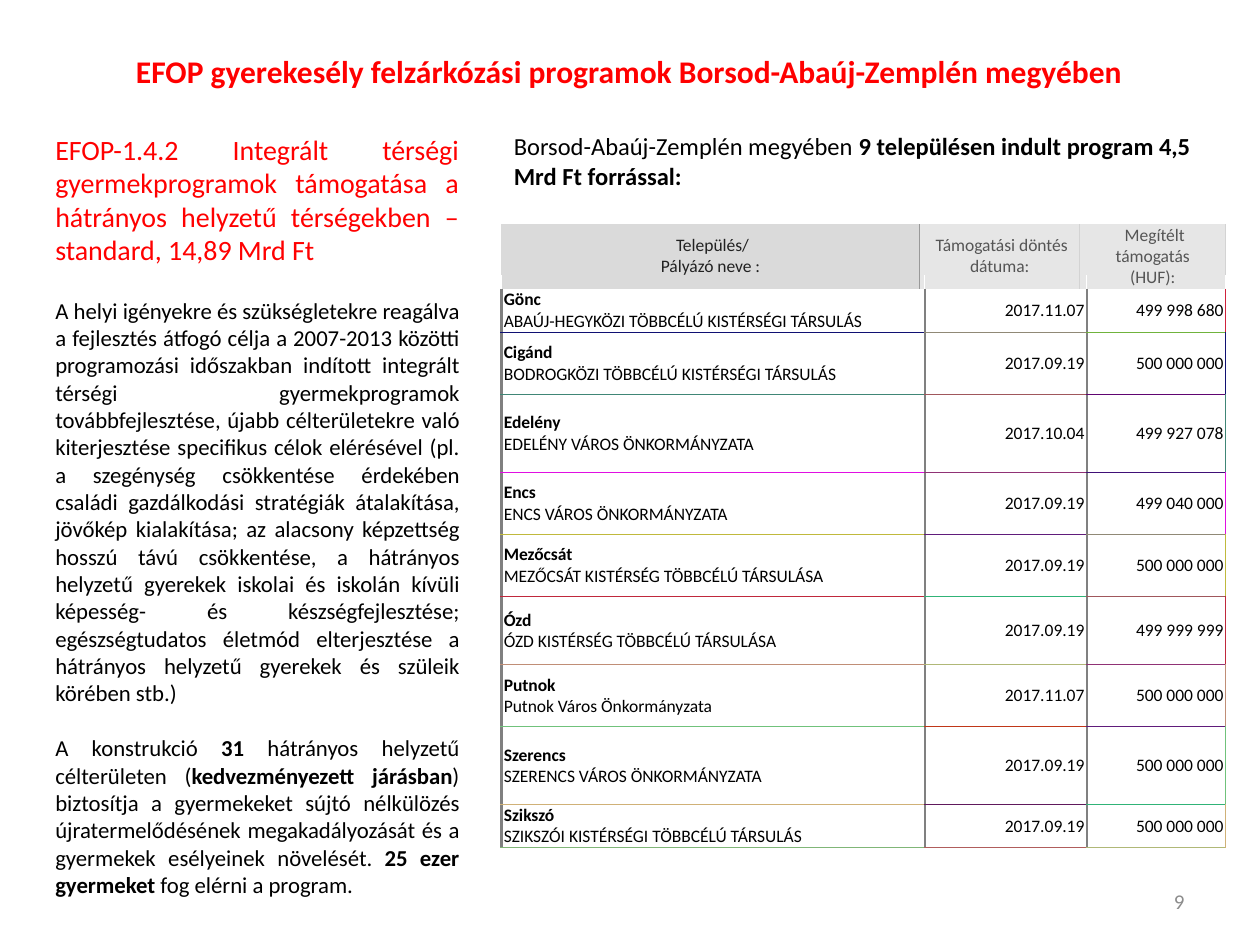
from dataclasses import dataclass

from lxml import etree
from pptx import Presentation
from pptx.dml.color import RGBColor
from pptx.enum.text import MSO_ANCHOR, PP_ALIGN
from pptx.oxml.ns import qn
from pptx.util import Pt

LEFT, CENTER, RIGHT, JUSTIFY = PP_ALIGN.LEFT, PP_ALIGN.CENTER, PP_ALIGN.RIGHT, PP_ALIGN.JUSTIFY
TOP, MIDDLE = MSO_ANCHOR.TOP, MSO_ANCHOR.MIDDLE
PLAIN_TABLE = "{2D5ABB26-0587-4C30-8999-92F81FD0307C}"


@dataclass(frozen=True)
class Theme:
    """Colours and type sizes of the slide."""
    font: str = "Calibri"
    red: str = "FF0000"
    black: str = "000000"
    page: str = "8C8C8C"
    head_dark: str = "212121"
    head_grey: str = "555555"
    fill_dark: str = "DADADA"
    fill_light: str = "E6E6E6"
    rule_dark: str = "999999"
    rule_light: str = "D3D3D3"
    column_rule: str = "808080"
    first_edge: str = "D0223C"
    white: str = "FFFFFF"
    title: float = 18
    scheme: float = 16
    intro: float = 14
    body: float = 13
    number: float = 12
    table: float = 10


THEME = Theme()

GOAL = (
    "A helyi igényekre és szükségletekre reagálva a fejlesztés átfogó célja a 2007-2013 közötti "
    "programozási időszakban indított integrált térségi gyermekprogramok továbbfejlesztése, újabb "
    "célterületekre való kiterjesztése specifikus célok elérésével (pl. a szegénység csökkentése "
    "érdekében családi gazdálkodási stratégiák átalakítása, jövőkép kialakítása; az alacsony "
    "képzettség hosszú távú csökkentése, a hátrányos helyzetű gyerekek iskolai és iskolán kívüli "
    "képesség- és készségfejlesztése; egészségtudatos életmód elterjesztése a hátrányos helyzetű "
    "gyerekek és szüleik körében stb.)"
)
REACH = [
    ("A konstrukció ", False), ("31", True), (" hátrányos helyzetű célterületen (", False),
    ("kedvezményezett járásban", True),
    (") biztosítja a gyermekeket sújtó nélkülözés újratermelődésének megakadályozását és a "
     "gyermekek esélyeinek növelését. ", False),
    ("25 ezer gyermeket ", True), ("fog elérni a program.", False),
]
HEADINGS = [
    (" Település/\vPályázó neve :", THEME.head_dark, THEME.fill_dark, THEME.rule_dark),
    (" Támogatási döntés\vdátuma:", THEME.head_grey, THEME.fill_light, THEME.rule_light),
    (" Megítélt támogatás\v(HUF):", THEME.head_grey, THEME.fill_light, THEME.rule_light),
]
GRANTS = [
    ("Gönc", "ABAÚJ-HEGYKÖZI TÖBBCÉLÚ KISTÉRSÉGI TÁRSULÁS", "2017.11.07", "499 998 680",
     25, ("101173", "908976", "70B33C")),
    ("Cigánd", "BODROGKÖZI TÖBBCÉLÚ KISTÉRSÉGI TÁRSULÁS", "2017.09.19", "500 000 000",
     35.5, ("408676", "A0575C", "600571")),
    ("Edelény", "EDELÉNY VÁROS ÖNKORMÁNYZATA", "2017.10.04", "499 927 078",
     44.5, ("E00FE1", "903275", "401077")),
    ("Encs", "ENCS VÁROS ÖNKORMÁNYZATA", "2017.09.19", "499 040 000",
     35.5, ("C0B93C", "601C7B", "908976")),
    ("Mezőcsát", "MEZŐCSÁT KISTÉRSÉG TÖBBCÉLÚ TÁRSULÁSA", "2017.09.19", "500 000 000",
     35.5, ("C0283C", "30B377", "A0575C")),
    ("Ózd", "ÓZD KISTÉRSÉG TÖBBCÉLÚ TÁRSULÁSA", "2017.09.19", "499 999 999",
     39, ("C08E76", "B0B877", "903275")),
    ("Putnok", "Putnok Város Önkormányzata", "2017.11.07", "500 000 000",
     35.5, ("70C27B", "C03718", "601C7B")),
    ("Szerencs", "SZERENCS VÁROS ÖNKORMÁNYZATA", "2017.09.19", "500 000 000",
     44.5, ("D0B177", "60195C", "30B377")),
    ("Szikszó", "SZIKSZÓI KISTÉRSÉGI TÖBBCÉLÚ TÁRSULÁS", "2017.09.19", "500 000 000",
     24.5, ("80B677", "B05D5C", "B0B877")),
]


def write(paragraph, pieces, size, color, align):
    """Fill a paragraph with (text, bold) pieces in one size and colour."""
    paragraph.text = "".join(text for text, _ in pieces[:1])
    paragraph.alignment = align
    for text, _ in pieces[1:]:
        paragraph.add_run().text = text
    if len(pieces) == 1:
        bolds = [pieces[0][1]] * len(paragraph.runs)
    else:
        bolds = [bold for _, bold in pieces]
    for run, bold in zip(paragraph.runs, bolds):
        run.font.name = THEME.font
        run.font.size = Pt(size)
        run.font.bold = bold
        run.font.color.rgb = RGBColor.from_string(color)


def add_text(slide, box, paragraphs, align=LEFT, anchor=TOP):
    """Place paragraphs given as (pieces, size, colour, space before)."""
    frame = slide.shapes.add_textbox(*map(Pt, box)).text_frame
    frame.word_wrap = True
    frame.vertical_anchor = anchor
    for index, (pieces, size, color, gap) in enumerate(paragraphs):
        paragraph = frame.add_paragraph() if index else frame.paragraphs[0]
        write(paragraph, pieces, size, color, align)
        paragraph.space_before = Pt(gap)


def add_plain_table(slide, box, widths, heights):
    """Add an unstyled table whose cells have narrow margins."""
    table = slide.shapes.add_table(len(heights), len(widths), *map(Pt, box)).table
    table.first_row = table.horz_banding = False
    table._tbl.tblPr.find(qn("a:tableStyleId")).text = PLAIN_TABLE
    for column, width in zip(table.columns, widths):
        column.width = Pt(width)
    for row, height in zip(table.rows, heights):
        row.height = Pt(height)
    for cell in table.iter_cells():
        cell.margin_left = cell.margin_right = Pt(1.4)
        cell.margin_top = cell.margin_bottom = 0
        cell.vertical_anchor = MIDDLE
    return table


def set_borders(cell, **edges):
    """Draw the edges L, R, T and B, each given as (colour, width)."""
    properties = cell._tc.get_or_add_tcPr()
    for side in "LRTB":
        if side in edges:
            color, width = edges[side]
            line = etree.SubElement(properties, qn(f"a:ln{side}"), w=str(Pt(width)))
            fill = etree.SubElement(line, qn("a:solidFill"))
            etree.SubElement(fill, qn("a:srgbClr"), val=color)


def add_heading_table(slide, box):
    """Place the grey row of column headings."""
    table = add_plain_table(slide, box, (239, 91.5, 83.5), (box[3],))
    left_rule = None
    for cell, (text, color, fill, rule) in zip(table.iter_cells(), HEADINGS):
        write(cell.text_frame.paragraphs[0], [(text, False)], THEME.table, color, CENTER)
        edges = {"R": (rule, 0.75)}
        if left_rule:
            edges["L"] = (left_rule, 0.75)
        set_borders(cell, **edges)
        cell.fill.solid()
        cell.fill.fore_color.rgb = RGBColor.from_string(fill)
        left_rule = rule


def add_grant_table(slide, box):
    """Place the grants, one row for each settlement, under a thin spacer row."""
    heights = [8] + [grant[4] for grant in GRANTS]
    table = add_plain_table(slide, box, (242, 92.5, 79.5), heights)
    column_rule = (THEME.column_rule, 1.5)
    for column in range(3):
        spacer = table.cell(0, column)
        spacer.text_frame.paragraphs[0].font.size = Pt(1)
        set_borders(spacer, L=(THEME.white, 0.75), R=(THEME.white, 0.75))
    above = (THEME.first_edge, None, None)
    for row, (town, applicant, date, amount, _, below) in enumerate(GRANTS, 1):
        contents = ([(town + "\v", True), (applicant, False)], [(date, False)], [(amount, False)])
        for column, pieces in enumerate(contents):
            cell = table.cell(row, column)
            write(cell.text_frame.paragraphs[0], pieces, THEME.table, THEME.black,
                  RIGHT if column else LEFT)
            edges = {"L": column_rule, "B": (below[column], 0.75),
                     "R": (above[0], 0.75) if column == 2 else column_rule}
            if row > 1:
                edges["T"] = (above[column], 0.75)
            set_borders(cell, **edges)
        above = below


def add_program_column(slide, box):
    """Place the justified description of the programme."""
    scheme = ("EFOP-1.4.2 Integrált térségi gyermekprogramok támogatása a hátrányos helyzetű "
              "térségekben – standard, 14,89 Mrd Ft")
    add_text(slide, box, [
        ([(scheme, False)], THEME.scheme, THEME.red, 0),
        ([(GOAL, False)], THEME.body, THEME.black, 17),
        (REACH, THEME.body, THEME.black, 16),
    ], JUSTIFY)


def main():
    """Build the slide and save it."""
    deck = Presentation()
    deck.slide_width, deck.slide_height = Pt(720), Pt(540)
    slide = deck.slides.add_slide(deck.slide_layouts[6])
    title = "EFOP gyerekesély felzárkózási programok Borsod-Abaúj-Zemplén megyében "
    intro = [("Borsod-Abaúj-Zemplén megyében ", False),
             ("9 településen indult program 4,5 Mrd Ft forrással:", True)]
    add_text(slide, (516, 500.5, 168, 29), [([("9", False)], THEME.number, THEME.page, 0)],
             RIGHT, MIDDLE)
    add_program_column(slide, (24.5, 72, 245, 448))
    add_heading_table(slide, (286.5, 128, 414, 37))
    add_grant_table(slide, (286.5, 157, 414, 327.5))
    add_text(slide, (70.5, 26, 578, 29), [([(title, True)], THEME.title, THEME.red, 0)], CENTER)
    add_text(slide, (286.5, 71.5, 408, 41), [(intro, THEME.intro, THEME.black, 0)])
    deck.save("out.pptx")


if __name__ == "__main__":
    main()
